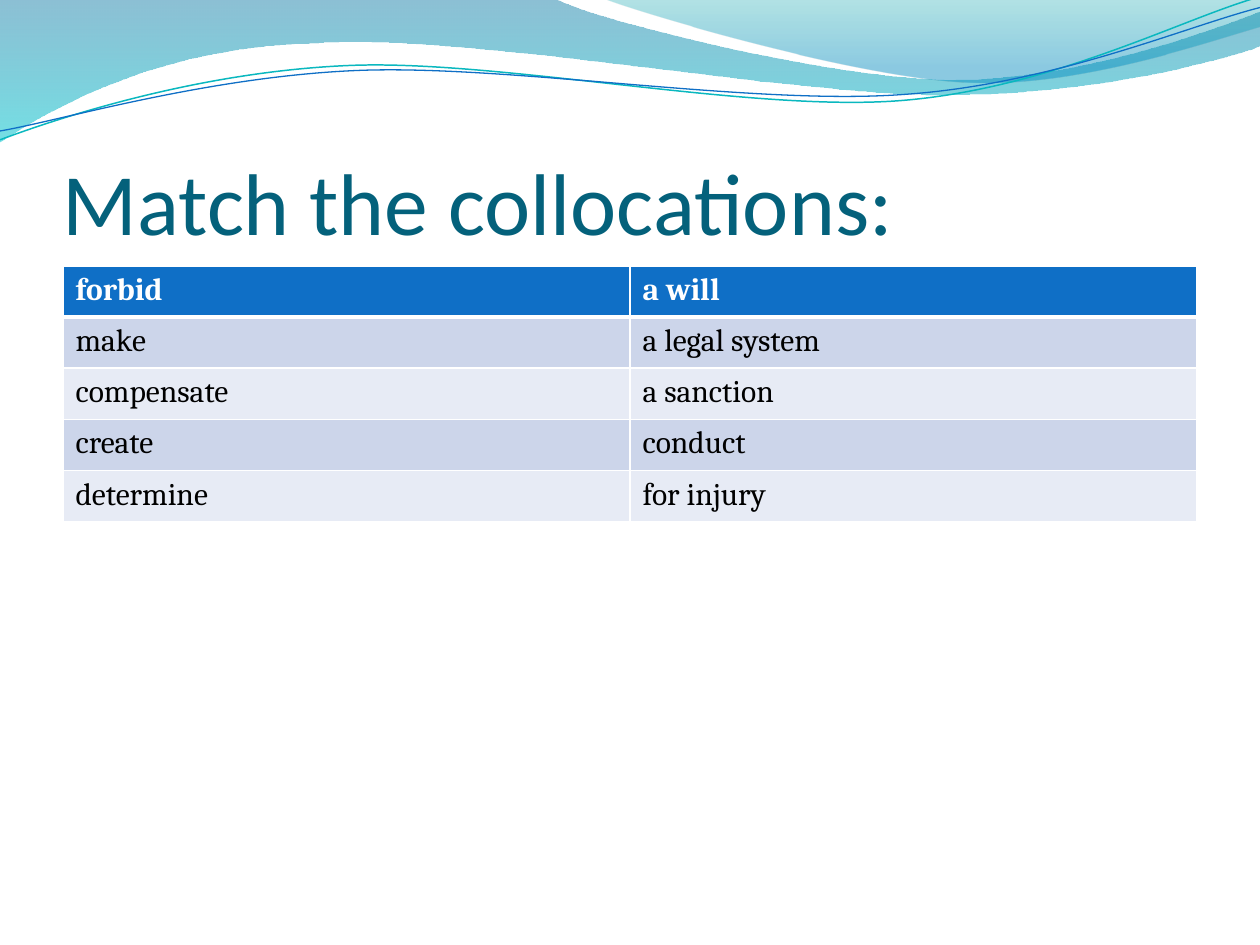
from dataclasses import dataclass
from math import cos, radians, sin

from lxml.etree import SubElement
from pptx import Presentation
from pptx.dml.color import RGBColor
from pptx.enum.text import MSO_ANCHOR
from pptx.oxml import parse_xml
from pptx.oxml.ns import nsdecls, qn
from pptx.util import Inches, Pt

Point = tuple[float, float]
Segment = list[Point]
RIBBON_TILT = 2.7


@dataclass
class GradientStop:
    position: float
    color: str
    opacity: int


@dataclass
class Wave:
    start: Point
    segments: list[Segment]
    stops: list[GradientStop]


@dataclass
class Ribbon:
    center: Point
    start: Point
    segments: list[Segment]
    color: str
    width: float


WAVES = [
    Wave(
        (0, 0),
        [
            [(4.4, -0.01)],
            [(4.76, 0.17), (6.64, 0.63), (7.58, 0.63)],
            [(8.53, 0.63), (9.58, 0.26), (10, 0.09)],
            [(10.01, 0.36)],
            [(9.83, 0.44), (8.7, 0.76), (7.46, 0.75)],
            [(6.22, 0.75), (3.82, 0.28), (2.57, 0.34)],
            [(1.29, 0.36), (0.46, 0.83), (-0.01, 1.13)],
        ],
        [GradientStop(0, "0074A1", 45), GradientStop(1, "00C6CF", 55)],
    ),
    Wave(
        (4.79, -0.01),
        [
            [(5.09, 0.11), (6.82, 0.62), (7.69, 0.65)],
            [(8.56, 0.69), (9.61, 0.32), (10, 0.21)],
            [(10, 0)],
        ],
        [GradientStop(0, "00A1A9", 30), GradientStop(0.8, "008BBF", 45)],
    ),
]

RIBBONS = [
    Ribbon(
        (4.99, 0.57),
        (0, 1.11),
        [
            [(0.48, 0.93), (1.58, 0.57), (2.77, 0.52)],
            [(3.95, 0.47), (5.93, 0.89), (7.13, 0.8)],
            [(8.33, 0.71), (9.38, 0.15), (9.98, -0.02)],
        ],
        "0AB8BF",
        0.85,
    ),
    Ribbon(
        (5, 0.59),
        (0, 1.04),
        [
            [(0.47, 0.96), (1.64, 0.61), (2.83, 0.56)],
            [(4.03, 0.51), (5.97, 0.84), (7.17, 0.75)],
            [(8.36, 0.67), (9.41, 0.21), (10, 0.06)],
        ],
        "0F6FC6",
        0.75,
    ),
]

COLLOCATIONS = [
    ("forbid", "a will"),
    ("make", "a legal system"),
    ("compensate", "a sanction"),
    ("create", "conduct"),
    ("determine", "for injury"),
]


def rgb(color: str) -> RGBColor:
    return RGBColor.from_string(color)


def rotate(point: Point, center: Point, degrees: float) -> Point:
    x, y = point[0] - center[0], point[1] - center[1]
    cosine, sine = cos(radians(degrees)), sin(radians(degrees))
    return center[0] + x * cosine - y * sine, center[1] + x * sine + y * cosine


def add_outline(slide, start: Point, segments: list[Segment], close: bool):
    builder = slide.shapes.build_freeform(Inches(start[0]), Inches(start[1]))
    ends = [(Inches(x), Inches(y)) for x, y in (segment[-1] for segment in segments)]
    builder.add_line_segments(ends, close=close)
    shape = builder.convert_to_shape()
    shape.shadow.inherit = False
    lines = list(shape._element.spPr.iter(qn("a:lnTo")))
    for line, segment in zip(lines, segments):
        if len(segment) == 3:
            curve = parse_xml(f'<a:cubicBezTo {nsdecls("a")}/>')
            for x, y in segment:
                local = {"x": str(Inches(x) - shape.left), "y": str(Inches(y) - shape.top)}
                SubElement(curve, qn("a:pt"), local)
            line.getparent().replace(line, curve)
    return shape


def add_wave(slide, wave: Wave) -> None:
    shape = add_outline(slide, wave.start, wave.segments, True)
    shape.line.fill.background()
    shape.fill.gradient()
    shape.fill.gradient_angle = 270
    for stop, values in zip(shape.fill.gradient_stops, wave.stops):
        stop.position = values.position
        stop.color.rgb = rgb(values.color)
    colors = shape._element.spPr.find(qn("a:gradFill")).iter(qn("a:srgbClr"))
    for color, values in zip(colors, wave.stops):
        SubElement(color, qn("a:alpha"), val=str(values.opacity * 1000))


def add_ribbon(slide, ribbon: Ribbon) -> None:
    start = rotate(ribbon.start, ribbon.center, RIBBON_TILT)
    segments = [
        [rotate(point, ribbon.center, RIBBON_TILT) for point in segment]
        for segment in ribbon.segments
    ]
    shape = add_outline(slide, start, segments, False)
    shape.rotation = 360 - RIBBON_TILT
    shape.fill.background()
    shape.line.color.rgb = rgb(ribbon.color)
    shape.line.width = Pt(ribbon.width)


def add_title(slide, text: str) -> None:
    box = slide.shapes.add_textbox(Inches(0.5), Inches(0.77), Inches(9), Inches(1.24))
    frame = box.text_frame
    frame.word_wrap = True
    frame.vertical_anchor = MSO_ANCHOR.BOTTOM
    frame.margin_left = frame.margin_right = frame.margin_bottom = 0
    frame.margin_top = Inches(0.05)
    paragraph = frame.paragraphs[0]
    paragraph.text = text
    paragraph.font.name = "Calibri"
    paragraph.font.size = Pt(50)
    paragraph.font.color.rgb = rgb("04617B")


def set_borders(cell, top: float, bottom: float) -> None:
    properties = cell._tc.get_or_add_tcPr()
    widths = {"lnL": 1, "lnR": 1, "lnT": top, "lnB": bottom}
    for index, (side, width) in enumerate(widths.items()):
        border = parse_xml(
            f'<a:{side} {nsdecls("a")} w="{Pt(width)}"><a:solidFill>'
            f'<a:srgbClr val="FFFFFF"/></a:solidFill></a:{side}>'
        )
        properties.insert(index, border)


def add_collocations(slide, rows: list[tuple[str, str]]) -> None:
    table = slide.shapes.add_table(
        len(rows), 2, Inches(0.5), Inches(2.11), Inches(9), Inches(2.03)
    ).table
    for row, texts in enumerate(rows):
        header = row == 0
        band = "CCD5EA" if row % 2 else "E7EBF5"
        for column, text in enumerate(texts):
            cell = table.cell(row, column)
            cell.fill.solid()
            cell.fill.fore_color.rgb = rgb("0F6FC6" if header else band)
            set_borders(cell, 3 if row == 1 else 1, 3 if header else 1)
            paragraph = cell.text_frame.paragraphs[0]
            paragraph.text = text
            paragraph.font.name = "Cambria"
            paragraph.font.size = Pt(18)
            paragraph.font.bold = header
            paragraph.font.color.rgb = rgb("FFFFFF" if header else "000000")


def main() -> None:
    presentation = Presentation()
    presentation.slide_width = Inches(10)
    presentation.slide_height = Inches(7.5)
    slide = presentation.slides.add_slide(presentation.slide_layouts[6])
    for wave in WAVES:
        add_wave(slide, wave)
    for ribbon in RIBBONS:
        add_ribbon(slide, ribbon)
    add_title(slide, "Match the collocations:")
    add_collocations(slide, COLLOCATIONS)
    presentation.save("out.pptx")


if __name__ == "__main__":
    main()
